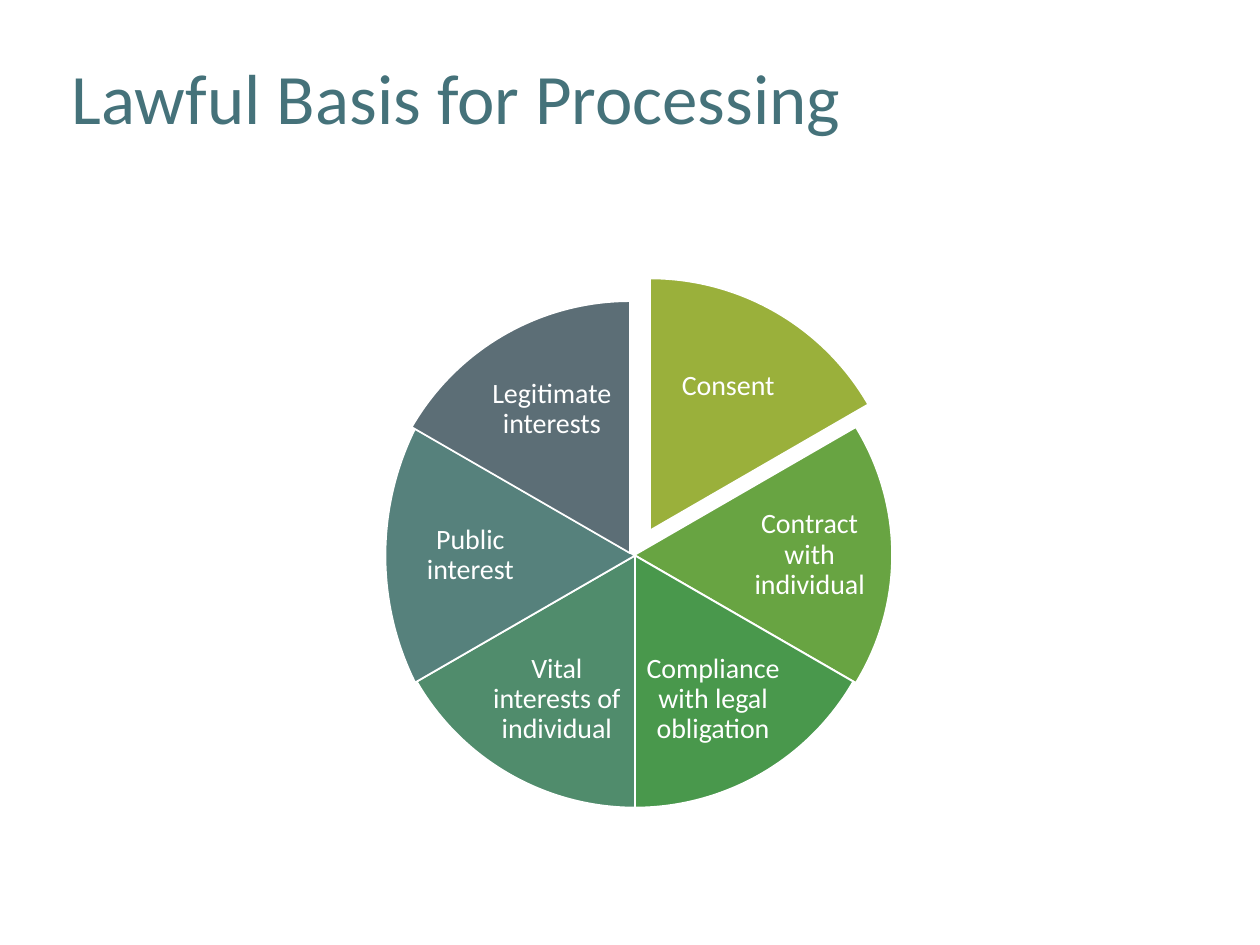
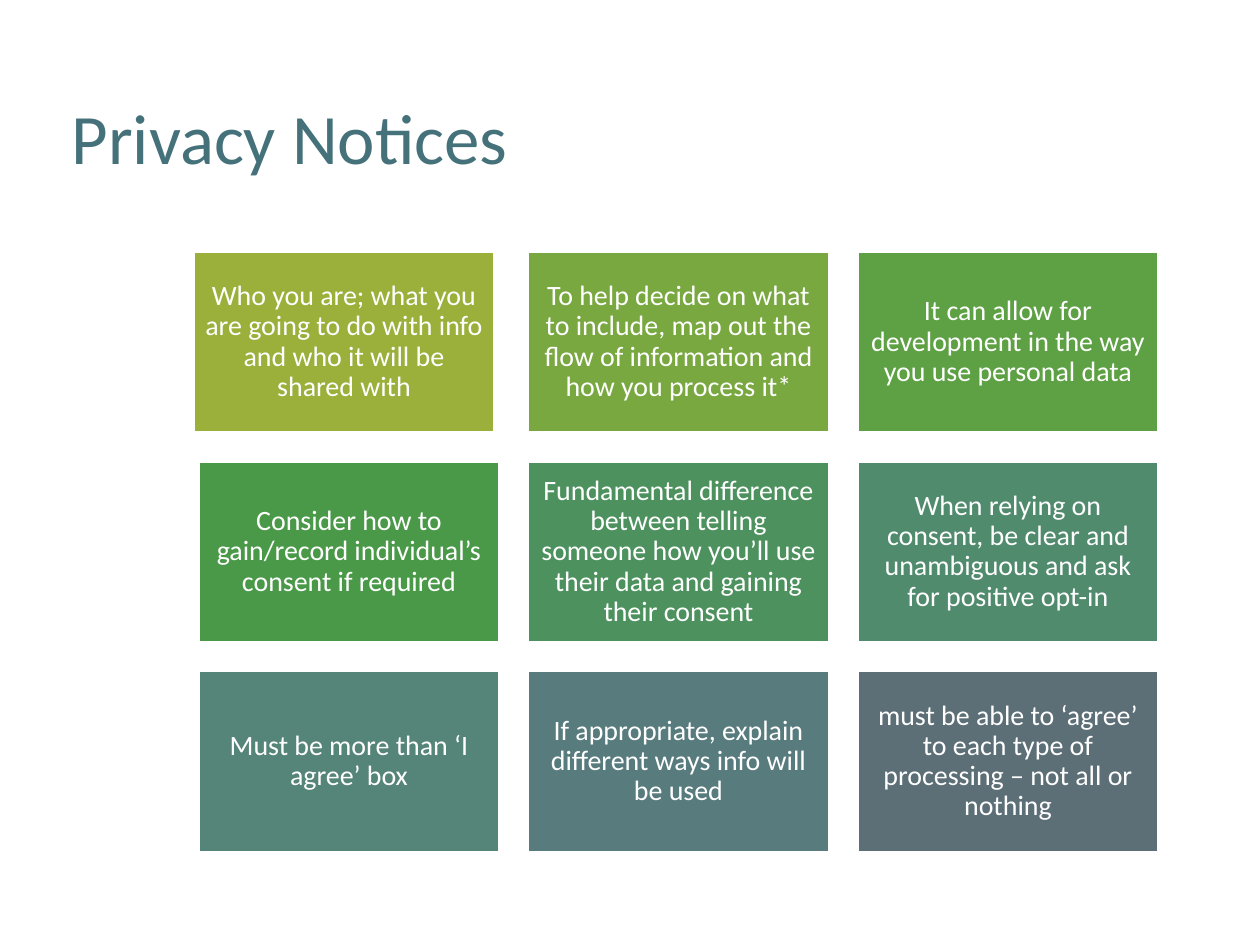
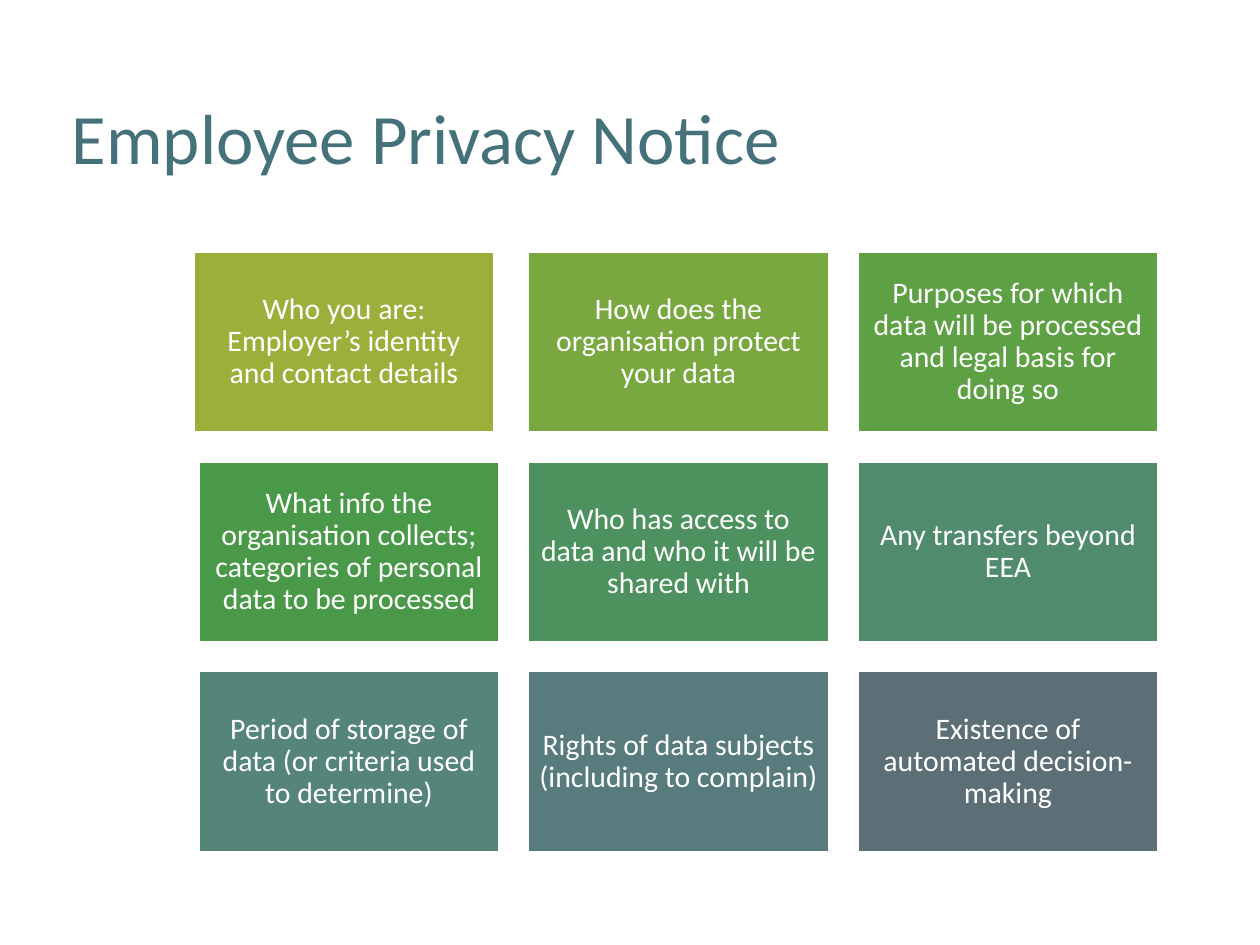
from dataclasses import dataclass

from pptx import Presentation
from pptx import util as u
from pptx.dml.color import RGBColor
from pptx.enum import shapes, text

FONT = "Calibri"
WHITE = RGBColor(0xFF, 0xFF, 0xFF)
TITLE_TEAL = RGBColor(0x45, 0x72, 0x7A)
SLICE_COLOURS = [RGBColor.from_string(code) for code in
                 ("9AB03B", "68A442", "49984C", "508C6C", "56817C", "5C6E76")]
TILE_COLOURS = [RGBColor.from_string(code) for code in
                ("9AB03B", "79A840", "5EA144", "4A9948", "4D925E",
                 "518B6E", "558479", "587B7D", "5C6E76")]

SLIDE_WIDTH, SLIDE_HEIGHT = u.Inches(10), u.Inches(7.5)
COLUMNS, ROWS = 100, 75
COLUMN, ROW = SLIDE_WIDTH / COLUMNS, SLIDE_HEIGHT / ROWS
DEGREE = 0.6  # one degree in the units of an angle adjustment


@dataclass
class Box:
    """An area of the slide, in columns and rows of the grid."""
    left: float
    top: float
    width: float
    height: float

    def emu(self):
        return (round(self.left * COLUMN), round(self.top * ROW),
                round(self.width * COLUMN), round(self.height * ROW))

    def inner(self, left, top, width, height):
        """Area inside this one, given as shares of its size."""
        return Box(self.left + left * self.width, self.top + top * self.height,
                   width * self.width, height * self.height)


TITLE_BOX = Box(4.7, 4, 79.2, 14.5)
PIE_BOX = Box(30.4, 24.1, 40, 40)
TILES_BOX = Box(15.8, 20, 76.1, 47.6)
TILE_GAP = 2.35
FIRST_TILE_NUDGE = -0.4

# label, shift of the slice (columns, rows), its size, label area in shares
SLICES = [
    ("Consent", (1.2, -2), (40, 40), (0.51, 0.11, 0.29, 0.21)),
    ("Contract with individual", (-0.5, 0.1), (40.9, 39.7), (0.69, 0.4, 0.3, 0.2)),
    ("Compliance with legal obligation", (0, 0), (40, 40), (0.51, 0.68, 0.29, 0.21)),
    ("Vital interests of individual", (0, 0), (40, 40), (0.2, 0.68, 0.29, 0.21)),
    ("Public interest", (0.2, -1.3), (39.6, 42.6), (0.02, 0.4, 0.3, 0.2)),
    ("Legitimate interests", (-0.4, -0.2), (40, 40), (0.2, 0.11, 0.29, 0.21)),
]

PRIVACY_NOTICES = [
    "Who you are; what you are going to do with info and who it will be shared with",
    "To help decide on what to include, map out the flow of information and how you process it*",
    "It can allow for development in the way you use personal data",
    "Consider how to gain/record individual’s consent if required",
    "Fundamental difference between telling someone how you’ll use their data and gaining their consent",
    "When relying on consent, be clear and unambiguous and ask for positive opt-in",
    "Must be more than ‘I agree’ box",
    "If appropriate, explain different ways info will be used",
    "must be able to ‘agree’ to each type of processing – not all or nothing",
]

EMPLOYEE_NOTICE = [
    "Who you are: Employer’s identity and contact details",
    "How does the organisation protect your data",
    "Purposes for which data will be processed and legal basis for doing so",
    "What info the organisation collects; categories of personal data to be processed",
    "Who has access to data and who it will be shared with",
    "Any transfers beyond EEA",
    "Period of storage of data (or criteria used to determine)",
    "Rights of data subjects (including to complain)",
    "Existence of automated decision-making",
]


def write(shape, words, size, colour=WHITE, align=text.PP_ALIGN.CENTER, inset=None):
    frame = shape.text_frame
    frame.word_wrap = True
    frame.vertical_anchor = text.MSO_ANCHOR.MIDDLE
    if inset is not None:
        frame.margin_left = frame.margin_right = u.Inches(inset)
        frame.margin_top = frame.margin_bottom = u.Inches(inset)
    para = frame.paragraphs[0]
    para.alignment = align
    para.line_spacing = 0.9
    span = para.add_run()
    span.text = words
    span.font.name = FONT
    span.font.size = u.Pt(size)
    span.font.color.rgb = colour


def add_filled(page, preset, box, colour):
    shape = page.shapes.add_shape(preset, *box.emu())
    shape.shadow.inherit = False
    shape.fill.solid()
    shape.fill.fore_color.rgb = colour
    shape.line.color.rgb = WHITE
    shape.line.width = u.Pt(1)
    return shape


def add_title(page, words, box=TITLE_BOX, rows_below=0):
    """Title centred in its box, above any rows kept free at the bottom."""
    shape = page.shapes.add_textbox(*box.emu())
    write(shape, words, 40.5, TITLE_TEAL, text.PP_ALIGN.LEFT)
    shape.text_frame.margin_bottom += round(rows_below * ROW)


def add_basis_pie(page, box):
    sweep = 360 / len(SLICES)
    for index, (label, shift, size, label_area) in enumerate(SLICES):
        area = Box(box.left + shift[0], box.top + shift[1], *size)
        piece = add_filled(page, shapes.MSO_SHAPE.PIE, area, SLICE_COLOURS[index])
        start = 270 + index * sweep
        piece.adjustments[0] = start % 360 * DEGREE
        piece.adjustments[1] = (start + sweep) % 360 * DEGREE
        caption = page.shapes.add_textbox(*area.inner(*label_area).emu())
        write(caption, label, 16, inset=0.02)


def add_tiles(page, box, notes, size, across=3):
    down = len(notes) // across
    width = (box.width - (across - 1) * TILE_GAP) / across
    height = (box.height - (down - 1) * TILE_GAP) / down
    for index, note in enumerate(notes):
        row, column = divmod(index, across)
        nudge = FIRST_TILE_NUDGE if index == 0 else 0
        area = Box(box.left + column * (width + TILE_GAP) + nudge,
                   box.top + row * (height + TILE_GAP), width, height)
        tile = add_filled(page, shapes.MSO_SHAPE.RECTANGLE, area, TILE_COLOURS[index])
        write(tile, note, size, inset=0.07)


def main():
    deck = Presentation()
    deck.slide_width, deck.slide_height = SLIDE_WIDTH, SLIDE_HEIGHT
    blank = deck.slide_layouts[6]

    page = deck.slides.add_slide(blank)
    add_title(page, "Lawful Basis for Processing", rows_below=6.4)
    add_basis_pie(page, PIE_BOX)

    for title, notes, size in (("Privacy Notices", PRIVACY_NOTICES, 16),
                               ("Employee Privacy Notice", EMPLOYEE_NOTICE, 17)):
        page = deck.slides.add_slide(blank)
        add_title(page, title)
        add_tiles(page, TILES_BOX, notes, size)

    deck.save("out.pptx")


if __name__ == "__main__":
    main()
